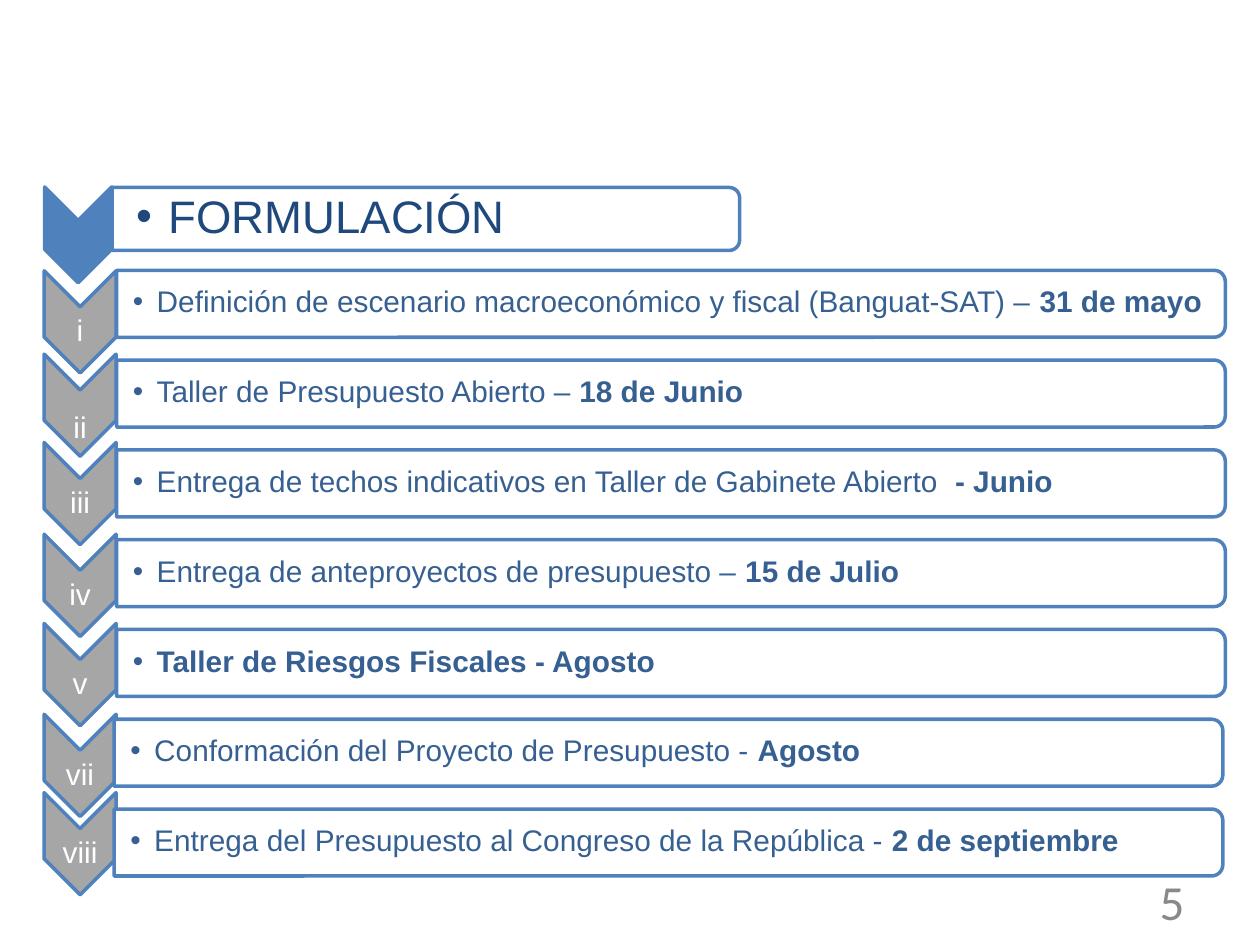
from lxml import etree
from pptx import Presentation
from pptx.dml.color import RGBColor
from pptx.enum.shapes import MSO_SHAPE
from pptx.enum.text import MSO_ANCHOR, MSO_AUTO_SIZE, PP_ALIGN
from pptx.oxml.ns import qn
from pptx.util import Cm, Pt

CHEVRON = MSO_SHAPE.CHEVRON
BAR = MSO_SHAPE.ROUND_2_SAME_RECTANGLE
TOP, MIDDLE = MSO_ANCHOR.TOP, MSO_ANCHOR.MIDDLE
LEFT, CENTER, RIGHT = PP_ALIGN.LEFT, PP_ALIGN.CENTER, PP_ALIGN.RIGHT
NO_AUTOFIT = MSO_AUTO_SIZE.NONE

WHITE = RGBColor(0xFF, 0xFF, 0xFF)
BLUE = RGBColor(0x4F, 0x81, 0xBD)
NAVY = RGBColor(0x1F, 0x49, 0x7D)
TEXT_BLUE = RGBColor(0x37, 0x60, 0x92)
GRAY = RGBColor(0xA6, 0xA6, 0xA6)
NUMBER_GRAY = RGBColor(0x89, 0x89, 0x89)

HEADING_FONT = {"name": "Arial", "size": Pt(26), "bold": False}
STEP_FONT = {"name": "Arial", "size": Pt(17)}
NUMBER_FONT = {"name": "Calibri", "size": Pt(28)}

FIRST_BAR_TOP = 5.45
BAR_PITCH = 1.81

STEPS = [
    ("i", 5.46, 2.35, "Definición de escenario macroeconómico y fiscal (Banguat-SAT) –", " 31 de mayo"),
    ("ii", 7.14, 2.35, "Taller de Presupuesto Abierto – ", "18 de Junio"),
    ("iii", 8.92, 2.35, "Entrega de techos indicativos en Taller de Gabinete Abierto", "  - Junio"),
    ("iv", 10.77, 2.35, "Entrega de anteproyectos de presupuesto – ", "15 de Julio"),
    ("v", 12.57, 2.35, "", "Taller de Riesgos Fiscales - Agosto"),
    ("vii", 14.4, 2.3, "Conformación del Proyecto de Presupuesto - ", "Agosto"),
    ("viii", 15.98, 2.3, "Entrega del Presupuesto al Congreso de la República - ", "2 de septiembre"),
]


def apply_format(target, values):
    for name, value in values.items():
        setattr(target, name, value)


def add_turned_shape(slide, kind, left, top, width, height, fill):
    shape = slide.shapes.add_shape(
        kind,
        Cm(left + (width - height) / 2),
        Cm(top + (height - width) / 2),
        Cm(height),
        Cm(width),
    )
    shape.rotation = 90
    shape.shadow.inherit = False
    shape.fill.solid()
    shape.fill.fore_color.rgb = fill
    shape.line.color.rgb = BLUE
    shape.line.width = Pt(2)


def add_text_box(slide, left, top, width, height):
    return slide.shapes.add_textbox(Cm(left), Cm(top), Cm(width), Cm(height))


def set_frame(shape, left_margin, margin, anchor=MIDDLE):
    frame = shape.text_frame
    apply_format(frame, {
        "word_wrap": True,
        "auto_size": NO_AUTOFIT,
        "vertical_anchor": anchor,
        "margin_left": Cm(left_margin),
        "margin_right": Cm(margin),
        "margin_top": Cm(margin),
        "margin_bottom": Cm(margin),
    })
    return frame.paragraphs[0]


def add_bullet(paragraph, indent):
    properties = paragraph._p.get_or_add_pPr()
    properties.set("marL", str(Cm(indent)))
    properties.set("indent", str(-Cm(indent)))
    etree.SubElement(properties, qn("a:buFont"), typeface="Arial")
    etree.SubElement(properties, qn("a:buChar"), char="•")


def write_paragraph(paragraph, runs, font, color, alignment=LEFT, spacing=0.9):
    apply_format(paragraph, {"alignment": alignment, "line_spacing": spacing})
    for text, values in runs:
        run = paragraph.add_run()
        run.text = text
        apply_format(run.font, {**font, **values})
        run.font.color.rgb = color


def add_step(slide, index, numeral, chevron_top, bar_left, text, date):
    bar_top = FIRST_BAR_TOP + index * BAR_PITCH
    add_turned_shape(slide, CHEVRON, 0.89, chevron_top, 1.45, 2.06, GRAY)
    label = add_text_box(slide, 0.89, chevron_top + 0.71, 1.45, 0.61)
    paragraph = set_frame(label, 0.03, 0.03, TOP if numeral == "ii" else MIDDLE)
    write_paragraph(paragraph, [(numeral, {})], STEP_FONT, WHITE, CENTER, 1.5)

    add_turned_shape(slide, BAR, bar_left, bar_top, 22.35, 1.35, WHITE)
    description = add_text_box(slide, bar_left, bar_top + 0.07, 22.3, 1.19)
    paragraph = set_frame(description, 0.33, 0.03)
    add_bullet(paragraph, 0.48)
    runs = [(text, {})] if text else []
    write_paragraph(paragraph, runs + [(date, {"bold": True})], STEP_FONT, TEXT_BLUE)


def add_heading(slide):
    add_turned_shape(slide, CHEVRON, 0.9, 3.77, 1.35, 1.93, BLUE)
    add_turned_shape(slide, BAR, 2.26, 3.78, 12.65, 1.27, WHITE)
    title = slide.shapes.title
    apply_format(title, {
        "left": Cm(2.26), "top": Cm(3.84), "width": Cm(12.57), "height": Cm(1.14),
    })
    slide.shapes.element.append(title.element)
    paragraph = set_frame(title, 0.5, 0.05)
    add_bullet(paragraph, 0.64)
    write_paragraph(paragraph, [("FORMULACIÓN", {})], HEADING_FONT, NAVY)


def add_page_number(slide):
    box = add_text_box(slide, 18.2, 17.65, 5.93, 1.01)
    paragraph = set_frame(box, 0.25, 0.25)
    write_paragraph(paragraph, [("5", {})], NUMBER_FONT, NUMBER_GRAY, RIGHT, 1.0)


def main():
    presentation = Presentation()
    presentation.slide_width = Cm(25.4)
    presentation.slide_height = Cm(19.05)
    slide = presentation.slides.add_slide(presentation.slide_layouts[5])
    for index, step in enumerate(STEPS):
        add_step(slide, index, *step)
    add_heading(slide)
    add_page_number(slide)
    presentation.save("out.pptx")


if __name__ == "__main__":
    main()
